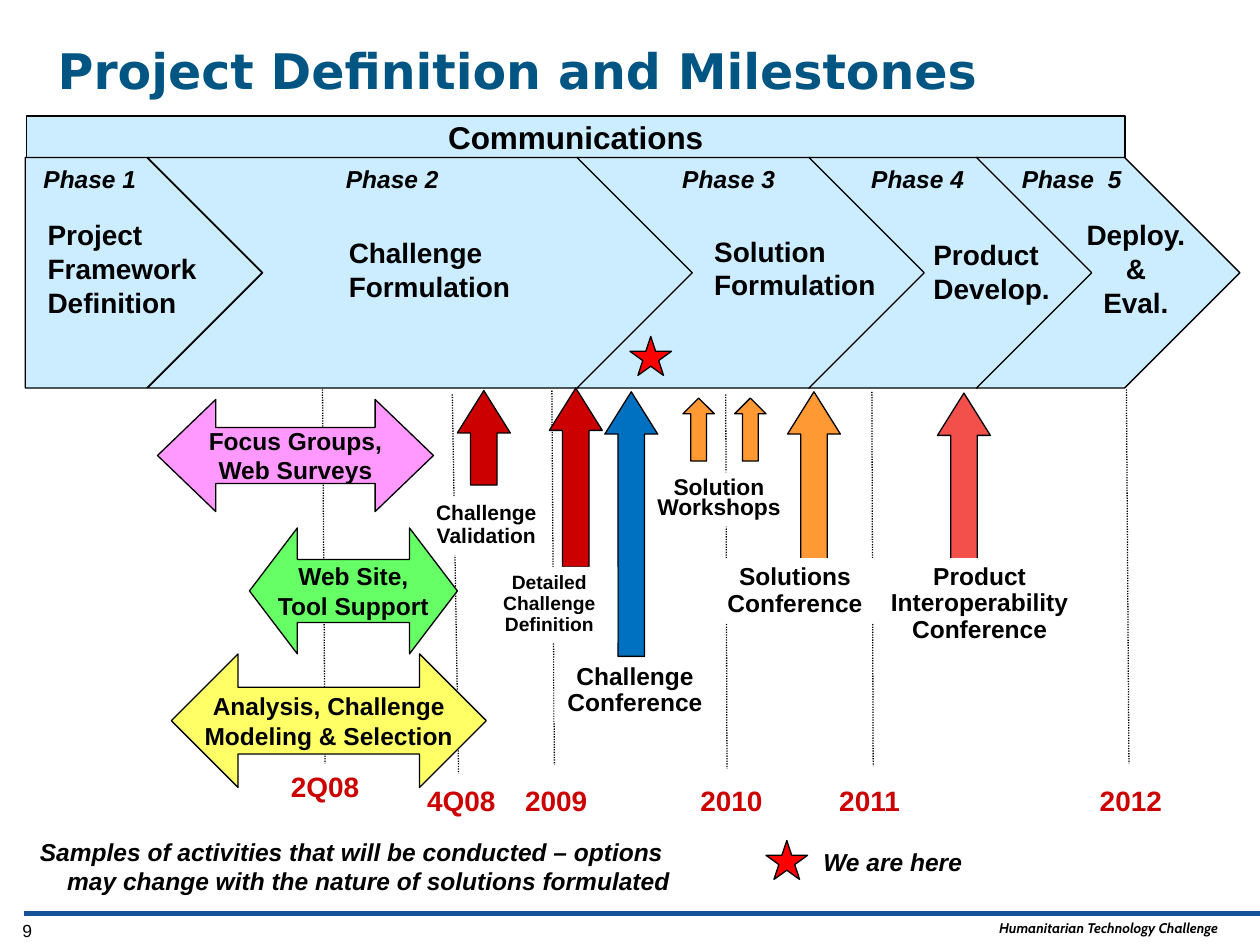
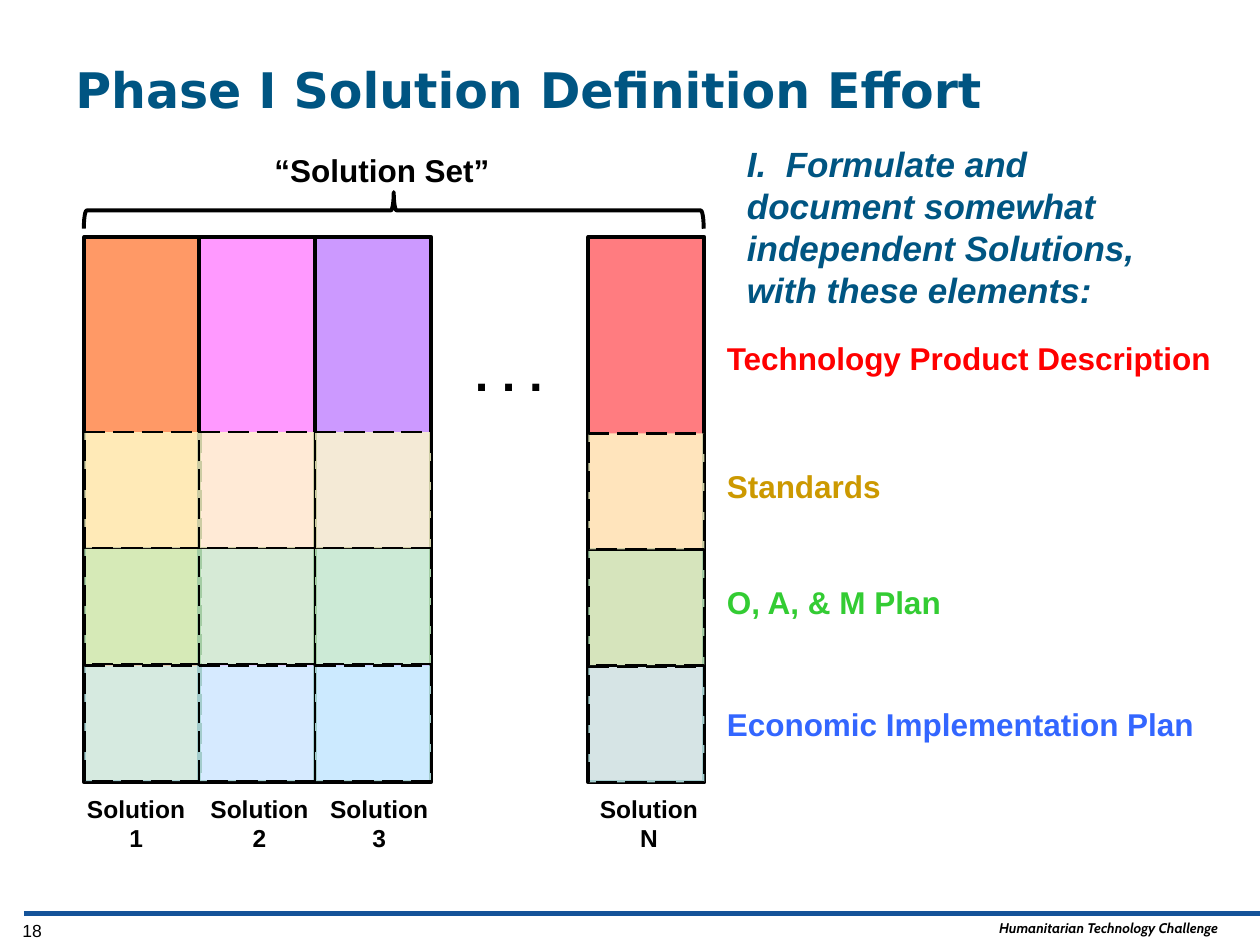
from lxml import etree
from pptx import Presentation
from pptx.dml.color import RGBColor
from pptx.enum import dml, shapes, text
from pptx.oxml.ns import qn
from pptx.util import Pt

PX = 9144
KIND = shapes.MSO_SHAPE
LEFT, MID, RIGHT = text.PP_ALIGN.LEFT, text.PP_ALIGN.CENTER, text.PP_ALIGN.RIGHT

BLACK = RGBColor(0x00, 0x00, 0x00)
WHITE = RGBColor(0xFF, 0xFF, 0xFF)
NAVY = RGBColor(0x14, 0x53, 0x99)
TEAL = RGBColor(0x00, 0x55, 0x82)
SKY = RGBColor(0xCC, 0xEC, 0xFF)
CRIMSON = RGBColor(0xCC, 0x00, 0x00)
RED = RGBColor(0xFF, 0x00, 0x00)
CORAL = RGBColor(0xF3, 0x4F, 0x4B)
BLUE = RGBColor(0x00, 0x70, 0xC0)
AMBER = RGBColor(0xFF, 0x99, 0x33)
PINK = RGBColor(0xFF, 0x99, 0xFF)
LIME = RGBColor(0x66, 0xFF, 0x66)
LEMON = RGBColor(0xFF, 0xFF, 0x66)
PEACH = RGBColor(0xFF, 0x99, 0x66)
LILAC = RGBColor(0xCC, 0x99, 0xFF)
ROSE = RGBColor(0xFF, 0x7C, 0x80)
CREAM = RGBColor(0xFF, 0xFF, 0xCC)
MINT = RGBColor(0xCC, 0xFF, 0xCC)
ICE = RGBColor(0xCC, 0xFF, 0xFF)
GOLD = RGBColor(0xCC, 0x99, 0x00)
GREEN = RGBColor(0x33, 0xCC, 0x33)
AZURE = RGBColor(0x33, 0x66, 0xFF)


def form(slide, kind, spot, fill=None, width=0.75, bends=()):
    shape = slide.shapes.add_shape(kind, *[v * PX for v in spot])
    shape.shadow.inherit = False
    if fill is None:
        shape.fill.background()
    else:
        shape.fill.solid()
        shape.fill.fore_color.rgb = fill
    shape.line.color.rgb = BLACK
    shape.line.width = Pt(width)
    for i, bend in enumerate(bends):
        shape.adjustments[i] = bend
    return shape


def write(slide, place, rows, size, tint=BLACK, align=LEFT, wrap=True,
          bold=True, slant=False, face="Arial", gap=None):
    if isinstance(place, tuple):
        frame = slide.shapes.add_textbox(*[v * PX for v in place])
    else:
        frame = place
    body = frame.text_frame
    body.word_wrap = wrap
    for i, row in enumerate(rows.split("\n")):
        para = body.add_paragraph() if i else body.paragraphs[0]
        para.alignment = align
        if gap:
            para.line_spacing = gap
        run = para.add_run()
        run.text = row
        font = run.font
        font.name, font.size = face, Pt(size)
        font.bold, font.italic = bold, slant
        font.color.rgb = tint
    return frame


deck = Presentation()
deck.slide_width, deck.slide_height = 1000 * PX, 750 * PX

pages = []
for title, spot, number in [
    ("Project Definition and Milestones", (36, 27, 931, 125), "9"),
    ("Phase I Solution Definition Effort", (50, 42, 875, 75), "18"),
]:
    page = deck.slides.add_slide(deck.slide_layouts[6])
    pages.append(page)
    rule = page.shapes.add_connector(
        shapes.MSO_CONNECTOR.STRAIGHT, 19 * PX, 725 * PX, 1000 * PX, 725 * PX)
    rule.line.color.rgb = NAVY
    rule.line.width = Pt(3)
    etree.SubElement(rule.element.spPr, qn("a:effectLst"))
    write(page, (765, 725, 230, 25), "Humanitarian Technology Challenge", 8,
          align=MID, slant=True, face="Cabin")
    write(page, (8, 725, 75, 25), number, 10, bold=False)
    write(page, spot, title, 28, TEAL, face="DejaVu Sans")

plan, grid = pages

for x, y, slope, drop in [
    (256, 309, 2, 297), (359, 313, 5, 301), (438, 310, 2, 297),
    (576, 313, 1, 297), (692, 311, 1, 297), (894, 309, 2, 297),
]:
    dots = plan.shapes.add_connector(
        shapes.MSO_CONNECTOR.STRAIGHT,
        x * PX, y * PX, (x + slope) * PX, (y + drop) * PX)
    dots.line.color.rgb = BLACK
    dots.line.width = Pt(0.75)
    dots.line.dash_style = dml.MSO_LINE.ROUND_DOT
    etree.SubElement(dots.element.spPr, qn("a:effectLst"))

band = form(plan, KIND.RECTANGLE, (21, 92, 872, 33), SKY)
band.text_frame.vertical_anchor = text.MSO_ANCHOR.MIDDLE
write(plan, band, "Communications", 18, align=MID, wrap=False)

cuts = [117, 458, 642, 775, 892]
for start, stop in zip(cuts, cuts[1:]):
    form(plan, KIND.CHEVRON, (start, 125, stop - start + 92, 183), SKY, bends=[0.5])
form(plan, KIND.PENTAGON, (20, 125, 188, 183), SKY, bends=[0.5])

for name, edge in [("Phase 1", 118), ("Phase 2", 358), ("Phase 3", 625),
                   ("Phase 4", 775), ("Phase  5", 900)]:
    write(plan, (edge - 117, 125, 117, 33), name, 14, align=RIGHT, slant=True)

for name, spot, align in [
    ("Project\nFramework\nDefinition", (28, 168, 140, 91), LEFT),
    ("Challenge\nFormulation", (267, 182, 150, 64), LEFT),
    ("Solution\nFormulation", (557, 181, 150, 64), LEFT),
    ("Product\nDevelop.", (731, 184, 114, 64), LEFT),
    ("Deploy.\n&\nEval.", (852, 168, 99, 91), MID),
]:
    write(plan, spot, name, 16, align=align, wrap=False)

for name, spot, size, gap, fill, head, arrows in [
    ("Solution Workshops", (508, 375, 125, 43), 13, 0.75, AMBER, 0.5,
     [(542, 316, 25, 50), (583, 316, 25, 50)]),
    ("Challenge Validation", (336, 394, 100, 47), 12, 0.9, CRIMSON, 0.8,
     [(363, 310, 42, 75)]),
    ("Challenge Conference", (440, 522, 128, 52), 14, 0.9, BLUE, 0.8,
     [(480, 311, 42, 210)]),
    ("Detailed Challenge Definition", (382, 450, 108, 60), 11, 0.9, CRIMSON, 0.8,
     [(436, 308, 42, 142)]),
    ("Solutions Conference", (566, 443, 130, 52), 14, 0.9, AMBER, 0.8,
     [(625, 311, 42, 133)]),
    ("Product Interoperability Conference", (694, 443, 167, 73), 14, 0.9, CORAL, 0.8,
     [(744, 312, 42, 133)]),
]:
    for arrow in arrows:
        form(plan, KIND.UP_ARROW, arrow, fill, bends=[0.5, head])
    label = write(plan, spot, name, size, align=MID, gap=gap)
    label.fill.solid()
    label.fill.fore_color.rgb = WHITE

for name, spot, fill, head in [
    ("Focus Groups,\nWeb Surveys", (125, 317, 219, 89), PINK, 0.52),
    ("Analysis, Challenge\nModeling & Selection", (136, 519, 250, 106), LEMON, 0.5),
    ("Web Site,\nTool Support", (198, 419, 165, 100), LIME, 0.38),
]:
    span = form(plan, KIND.LEFT_RIGHT_ARROW, spot, fill, bends=[0.5, head])
    span.text_frame.vertical_anchor = text.MSO_ANCHOR.MIDDLE
    write(plan, span, name, 14, align=MID, wrap=False)

for name, x, y in [("2Q08", 221, 606), ("4Q08", 329, 617), ("2009", 406, 617),
                   ("2010", 545, 617), ("2011", 654, 617), ("2012", 862, 617)]:
    write(plan, (x, y, 74 if "Q" in name else 70, 37), name, 16, CRIMSON,
          RIGHT, wrap=False)

for x, y in [(500, 267), (608, 667)]:
    form(plan, KIND.STAR_5_POINT, (x, y, 33, 31), RED)
write(plan, (642, 667, 133, 34), "We are here", 14, align=MID, slant=True)
write(plan, (20, 659, 522, 57),
      "Samples of activities that will be conducted – options \n"
      "may change with the nature of solutions formulated",
      14, align=RIGHT, slant=True)

stacks = [("1", 67, 42, 343, PEACH), ("2", 158, 140, 343, PINK),
          ("3", 250, 235, 343, LILAC), ("N", 467, 449, 344, ROSE)]
for name, x, left, top, fill in stacks:
    form(grid, KIND.RECTANGLE, (x, 188, 92, 433), fill, 2.25)
    write(grid, (left, 625, 132, 57), "Solution\n" + name, 14, align=MID)

for name, x, left, top, fill in stacks:
    for i, tint in [(2, ICE), (1, MINT), (0, CREAM)]:
        cell = form(grid, KIND.RECTANGLE, (x, top + i * 185 // 2, 92, 92), tint, 1.5)
        cell.line.dash_style = dml.MSO_LINE.LONG_DASH
        shade = cell.element.spPr.find(qn("a:solidFill")).find(qn("a:srgbClr"))
        etree.SubElement(shade, qn("a:alpha"), val="80000")

brace = form(grid, KIND.RIGHT_BRACE, (298, -79, 29, 492), None, 2.25, [0.08, 0.5])
brace.rotation = 270
write(grid, (208, 115, 192, 40), "“Solution Set”", 18, wrap=False)
write(grid, (367, 267, 74, 57), ". . .", 28, wrap=False)

for name, y, w, tint in [
    ("Technology Product Description", 264, 422, RED),
    ("Standards", 366, 144, GOLD),
    ("O, A, & M Plan", 458, 192, GREEN),
    ("Economic Implementation Plan", 555, 409, AZURE),
]:
    write(grid, (567, y, w, 40), name, 18, tint, wrap=False)

write(grid, (583, 108, 375, 145),
      "I.  Formulate and document somewhat independent Solutions, "
      "with these elements:", 20, TEAL, slant=True)

deck.save("out.pptx")
